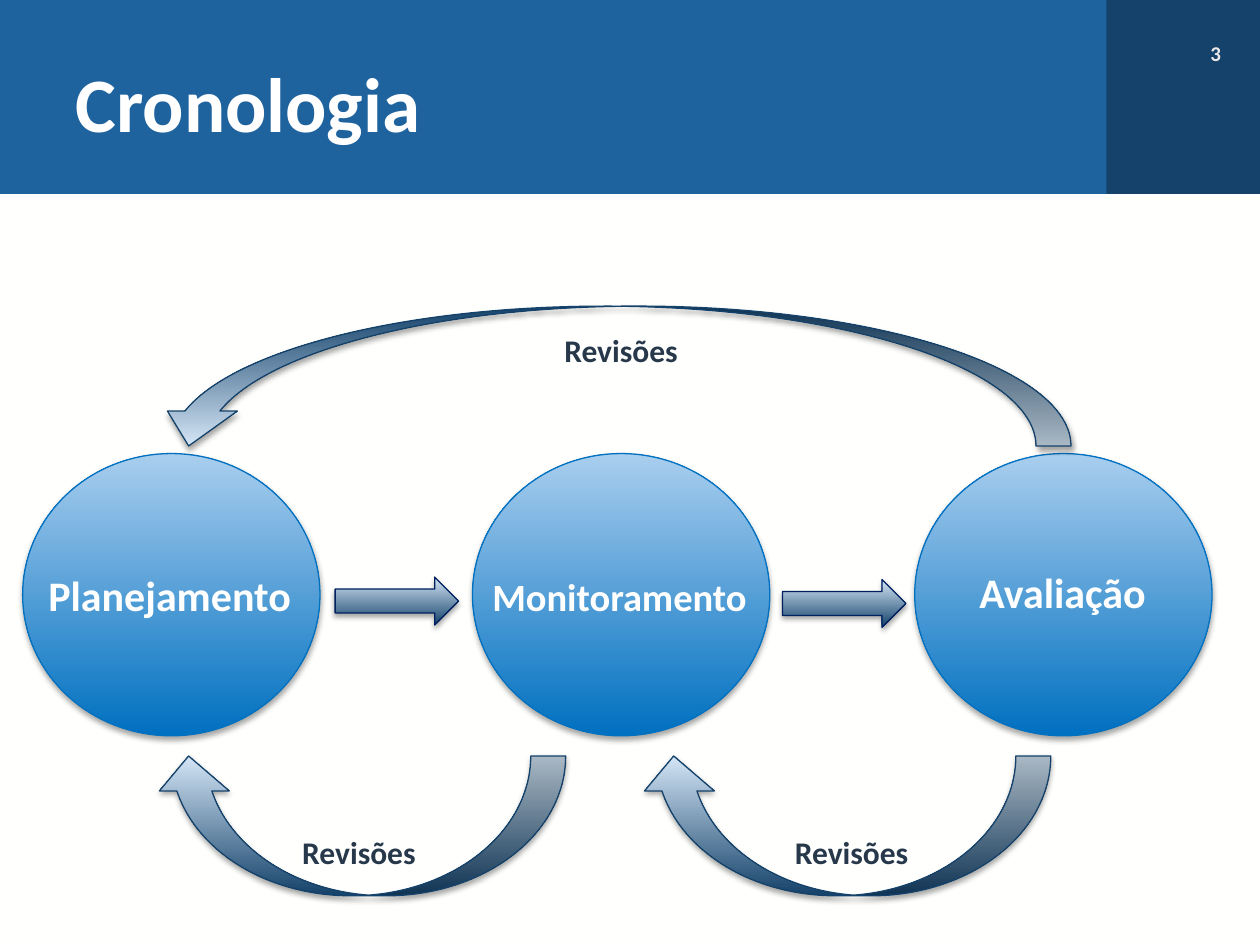
from lxml.etree import SubElement
from pptx import Presentation
from pptx.dml.color import RGBColor
from pptx.enum.shapes import MSO_SHAPE
from pptx.enum.text import MSO_ANCHOR, MSO_AUTO_SIZE, PP_ALIGN
from pptx.oxml.ns import qn
from pptx.util import Inches, Pt

W, H = Inches(10), Inches(7.5)
NAVY, PALE = "15426A", "D4E6F6"
BLUE, SKY = "0070C0", "A9CEEE"
WHITE, SLATE = "FFFFFF", "27384B"
BAND_H = 20.53
CIRCLE_W, CIRCLE_H, CIRCLE_Y = 23.6, 29.87, 48


def color(value):
    return RGBColor.from_string(value)


def box(x, y, w, h):
    return round(W * x / 100), round(H * y / 100), round(W * w / 100), round(H * h / 100)


def apply(obj, values):
    for name, value in values.items():
        setattr(obj, name, value)


def write(tf, text, size, fill, **para):
    p = tf.paragraphs[0]
    apply(p, para)
    r = p.add_run()
    r.text = text
    apply(r.font, {"name": "Calibri", "size": Pt(size), "bold": True})
    r.font.color.rgb = color(fill)


def add_band(s, x, w, fill):
    sp = s.shapes.add_shape(MSO_SHAPE.RECTANGLE, *box(x, 0, w, BAND_H))
    sp.shadow.inherit = False
    sp.fill.solid()
    sp.fill.fore_color.rgb = color(fill)
    sp.line.fill.background()


def add_shadow(sp):
    sp.shadow.inherit = False
    effects = sp._element.spPr.find(qn("a:effectLst"))
    outer = SubElement(effects, qn("a:outerShdw"), blurRad="40000", dist="23000",
                       dir="5400000", rotWithShape="0")
    black = SubElement(outer, qn("a:srgbClr"), val="000000")
    SubElement(black, qn("a:alpha"), val="35000")


def add_glossy(shapes, kind, area, dark, light, line, flips=()):
    sp = shapes.add_shape(kind, *box(*area))
    sp.fill.gradient()
    sp.fill.gradient_angle = 90
    for stop, value in zip(sp.fill.gradient_stops, (dark, light)):
        stop.color.rgb = color(value)
    sp.line.color.rgb = color(line)
    sp.line.width = Pt(0.75)
    add_shadow(sp)
    for flip in flips:
        sp._element.spPr.find(qn("a:xfrm")).set(flip, "1")


def add_label(shapes, text, center, y, w, h, size, fill):
    tf = shapes.add_textbox(*box(center - w / 2, y, w, h)).text_frame
    apply(tf, {"word_wrap": False, "auto_size": MSO_AUTO_SIZE.SHAPE_TO_FIT_TEXT})
    write(tf, text, size, fill)


def add_stage(s, text, x, label_y, label_w, label_h, size):
    shapes = s.shapes.add_group_shape().shapes
    area = (x, CIRCLE_Y, CIRCLE_W, CIRCLE_H)
    add_glossy(shapes, MSO_SHAPE.OVAL, area, BLUE, SKY, BLUE)
    add_label(shapes, text, x + CIRCLE_W / 2, label_y, label_w, label_h, size, WHITE)


def add_header(s, text, number):
    add_band(s, 0, 100, "1F639E")
    add_band(s, 87.8, 12.2, NAVY)
    tf = s.shapes.add_textbox(*box(83.1, 4.13, 14.8, 5.33)).text_frame
    tf.word_wrap = True
    write(tf, number, 12, "EAE8E8", alignment=PP_ALIGN.RIGHT, line_spacing=0.8)
    title = s.shapes.title
    apply(title, dict(zip(("left", "top", "width", "height"), box(5, 4, 81.1, 15.33))))
    title.text_frame.vertical_anchor = MSO_ANCHOR.MIDDLE
    write(title.text_frame, text, 44, WHITE, alignment=PP_ALIGN.LEFT, line_spacing=0.8)
    s.shapes._spTree.append(title._element)


def main():
    prs = Presentation()
    apply(prs, {"slide_width": W, "slide_height": H})
    s = prs.slides.add_slide(prs.slide_layouts[5])
    s.background.fill.solid()
    s.background.fill.fore_color.rgb = color("FFFFFE")
    add_header(s, "Cronologia", "3")

    for stage in (("Planejamento", 1.8, 59.6, 21.5, 6.67, 24),
                  ("Monitoramento", 37.5, 60, 22.4, 6.27, 22),
                  ("Avaliação", 72.6, 59.33, 15.3, 6.67, 24)):
        add_stage(s, *stage)

    for x, y in ((26.6, 61.07), (62.1, 61.33)):
        add_glossy(s.shapes, MSO_SHAPE.RIGHT_ARROW, (x, y, 9.8, 5.07), NAVY, PALE, "002060")

    for x, y, w, flips in ((50.7, 80, 32.7, ["flipH"]),
                           (12.2, 80, 32.7, ["flipH"]),
                           (12.2, 32.4, 72.8, ["flipH", "flipV"])):
        add_glossy(s.shapes, MSO_SHAPE.CURVED_UP_ARROW, (x, y, w, 14.8),
                   NAVY, PALE, NAVY, flips)

    for center, y in ((49.35, 34.4), (67.65, 87.47), (28.55, 87.47)):
        add_label(s.shapes, "Revisões", center, y, 11.1, 5.33, 18, SLATE)

    prs.save("out.pptx")


if __name__ == "__main__":
    main()
